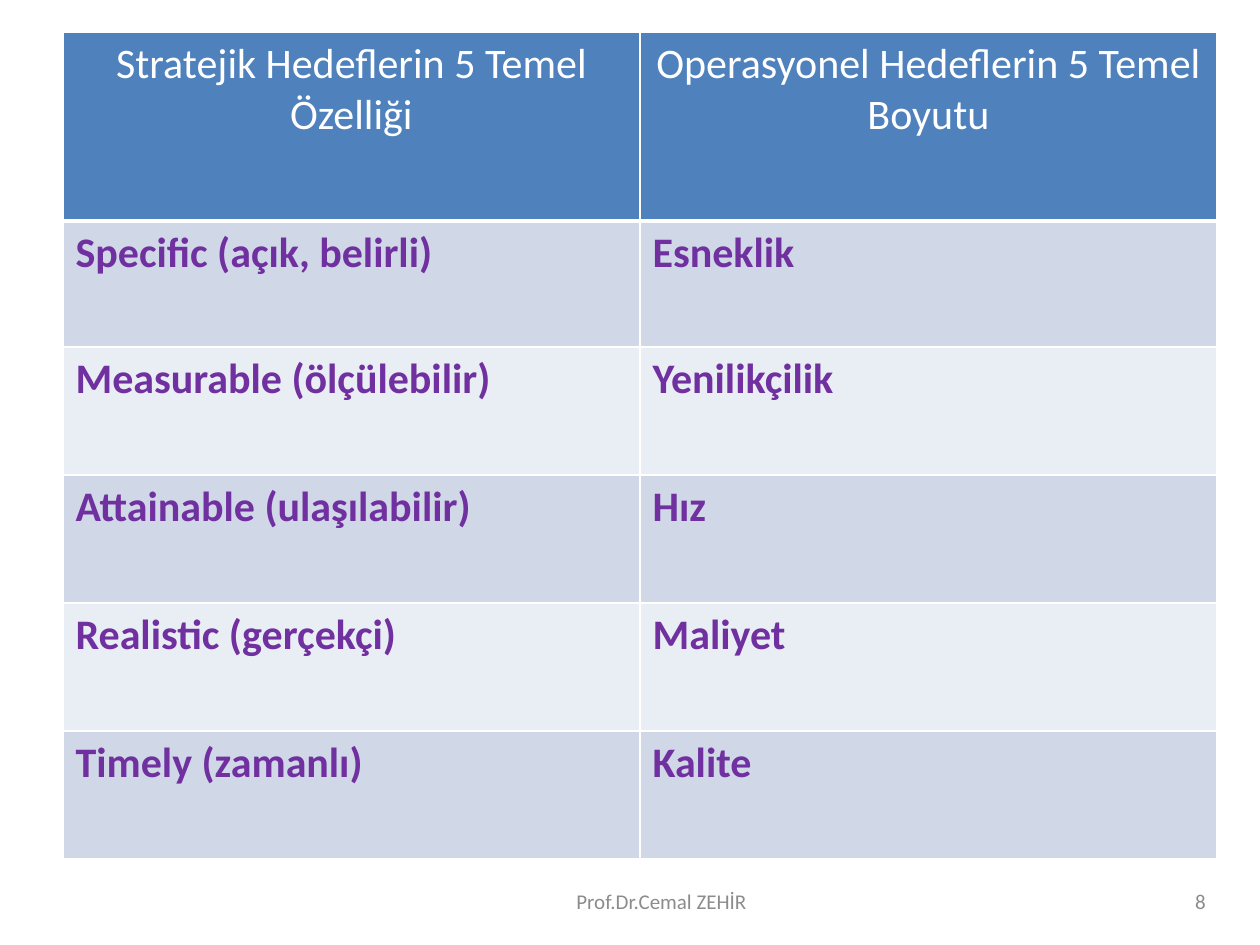
from dataclasses import dataclass

from lxml import etree
from pptx import Presentation
from pptx.dml.color import RGBColor
from pptx.enum.text import MSO_ANCHOR, PP_ALIGN
from pptx.oxml.ns import qn
from pptx.slide import Slide
from pptx.util import Emu, Pt

LEFT, CENTER, RIGHT = PP_ALIGN.LEFT, PP_ALIGN.CENTER, PP_ALIGN.RIGHT
MIDDLE = MSO_ANCHOR.MIDDLE

WHITE = RGBColor(0xFF, 0xFF, 0xFF)
BLUE = RGBColor(0x4F, 0x81, 0xBD)
BAND_DARK = RGBColor(0xD0, 0xD8, 0xE8)
BAND_LIGHT = RGBColor(0xE9, 0xED, 0xF4)
PURPLE = RGBColor(0x70, 0x30, 0xA0)
GRAY = RGBColor(0x8C, 0x8C, 0x8C)

GOALS = [
    ("Stratejik Hedeflerin 5 Temel Özelliği", "Operasyonel Hedeflerin 5 Temel Boyutu"),
    ("Specific (açık, belirli)", "Esneklik"),
    ("Measurable (ölçülebilir)", "Yenilikçilik"),
    ("Attainable (ulaşılabilir)", "Hız"),
    ("Realistic (gerçekçi)", "Maliyet"),
    ("Timely (zamanlı)", "Kalite"),
]
COLUMN_WIDTHS = [577, 577]
ROW_HEIGHTS = [189, 126] + [128] * 4


def px(length):
    return Emu(round(length * 914400 / 126))


@dataclass
class SlideBuilder:
    """Holds the text style and the slide being built."""

    slide: Slide
    font: str = "Calibri"
    table_size: int = 24
    footer_size: int = 12

    def set_text(self, frame, text, size, color, align, bold=False):
        frame.text = text
        paragraph = frame.paragraphs[0]
        paragraph.alignment = align
        for run in paragraph.runs:
            run.font.name = self.font
            run.font.size = Pt(size)
            run.font.bold = bold
            run.font.color.rgb = color

    def borders(self, cell, bottom):
        properties = cell._tc.get_or_add_tcPr()
        for side, width in (("lnL", 1), ("lnR", 1), ("lnT", 1), ("lnB", bottom)):
            line = etree.SubElement(properties, qn(f"a:{side}"), w=str(Pt(width)))
            fill = etree.SubElement(line, qn("a:solidFill"))
            etree.SubElement(fill, qn("a:srgbClr"), val=str(WHITE))

    def table(self, left, top, widths, heights, rows):
        table = self.slide.shapes.add_table(
            len(rows), len(widths), px(left), px(top), px(sum(widths)), px(sum(heights))
        ).table
        for column, width in zip(table.columns, widths):
            column.width = px(width)
        for index, (row, height, texts) in enumerate(zip(table.rows, heights, rows)):
            row.height = px(height)
            header = index == 0
            band = BAND_DARK if index % 2 else BAND_LIGHT
            for cell, text in zip(row.cells, texts):
                self.borders(cell, bottom=3 if header else 1)
                cell.fill.solid()
                cell.fill.fore_color.rgb = BLUE if header else band
                self.set_text(
                    cell.text_frame, text, self.table_size,
                    WHITE if header else PURPLE,
                    CENTER if header else LEFT,
                    bold=not header,
                )

    def footer(self, left, width, text, align):
        frame = self.slide.shapes.add_textbox(px(left), px(876), px(width), px(50)).text_frame
        frame.word_wrap = True
        frame.vertical_anchor = MIDDLE
        self.set_text(frame, text, self.footer_size, GRAY, align)


def main():
    presentation = Presentation()
    presentation.slide_width, presentation.slide_height = px(1260), px(945)
    builder = SlideBuilder(presentation.slides.add_slide(presentation.slide_layouts[6]))
    builder.table(63, 32, COLUMN_WIDTHS, ROW_HEIGHTS, GOALS)
    builder.footer(462, 399, "Prof.Dr.Cemal ZEHİR", CENTER)
    builder.footer(924, 294, "8", RIGHT)
    presentation.save("out.pptx")


if __name__ == "__main__":
    main()
